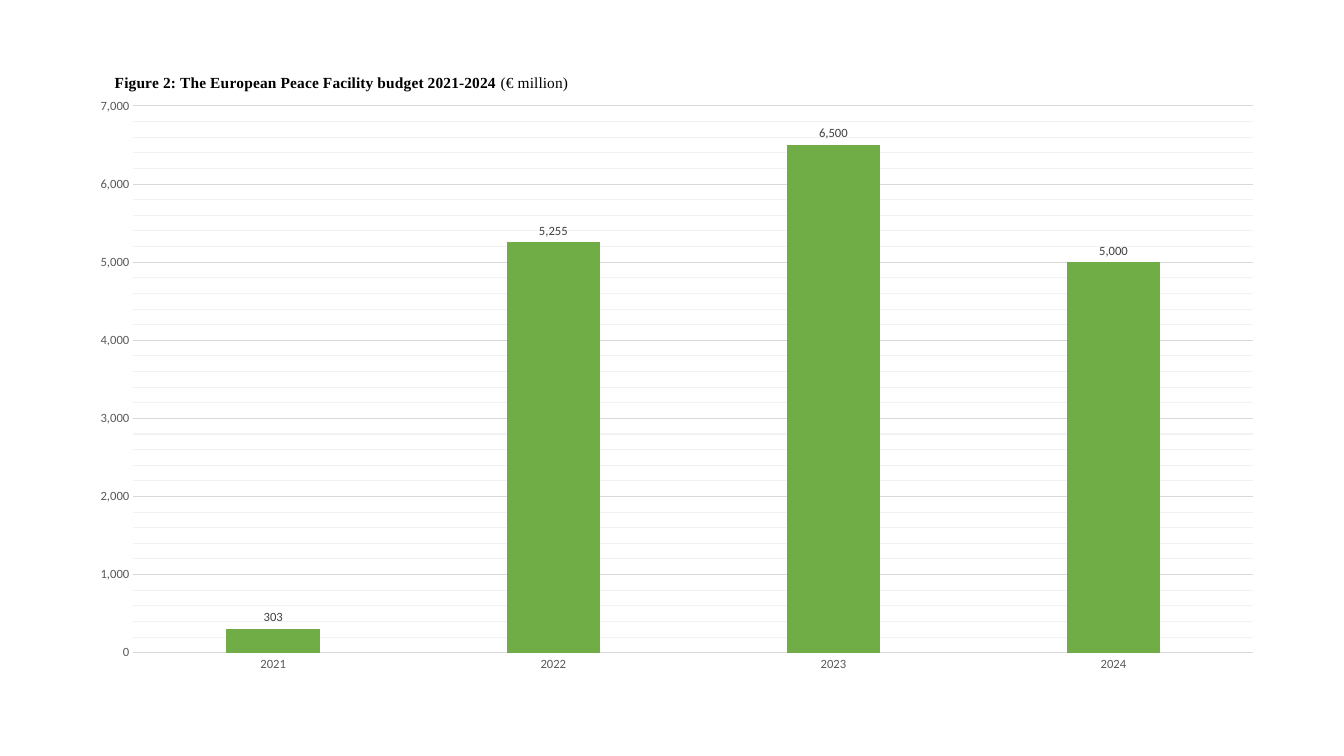
from dataclasses import dataclass

from pptx import Presentation
from pptx.chart.data import CategoryChartData
from pptx.dml.color import RGBColor
from pptx.enum.chart import XL_CHART_TYPE, XL_LABEL_POSITION, XL_TICK_MARK
from pptx.oxml import parse_xml
from pptx.oxml.ns import qn
from pptx.util import Inches, Pt

COLUMNS = XL_CHART_TYPE.COLUMN_CLUSTERED
OUTSIDE_END = XL_LABEL_POSITION.OUTSIDE_END
NO_TICK = XL_TICK_MARK.NONE
CHART_NS = "http://schemas.openxmlformats.org/drawingml/2006/chart"
DRAWING_NS = "http://schemas.openxmlformats.org/drawingml/2006/main"
BLANK_LAYOUT = 6


@dataclass(frozen=True)
class Theme:
    body_font: str = "Calibri"
    title_font: str = "Times New Roman"
    title_size: float = 11
    label_size: float = 9
    title_color: str = "000000"
    bar: str = "70AD47"
    axis_text: str = "595959"
    label_text: str = "404040"
    major_line: str = "D9D9D9"
    minor_line: str = "F2F2F2"
    line_width: float = 0.75


class BudgetSlide:
    def __init__(self, presentation, theme):
        self.theme = theme
        self.slide = presentation.slides.add_slide(
            presentation.slide_layouts[BLANK_LAYOUT])

    def style_font(self, font, name, size, color, bold=False):
        font.name = name
        font.size = Pt(size)
        font.bold = bold
        font.color.rgb = RGBColor.from_string(color)

    def style_line(self, line, color):
        line.width = Pt(self.theme.line_width)
        line.color.rgb = RGBColor.from_string(color)

    def style_minor_gridlines(self, axis):
        """Format the minor gridlines, which have no public format object."""
        gridlines = axis._element.find(qn("c:minorGridlines"))
        gridlines.append(parse_xml(
            f'<c:spPr xmlns:c="{CHART_NS}" xmlns:a="{DRAWING_NS}">'
            f'<a:ln w="{Pt(self.theme.line_width)}"><a:solidFill>'
            f'<a:srgbClr val="{self.theme.minor_line}"/>'
            f'</a:solidFill></a:ln></c:spPr>'))

    def manual_layout(self, target="", **fractions):
        """Build a chart layout from fractions of the chart area."""
        target_tag = f'<c:layoutTarget val="{target}"/>' if target else ""
        modes = '<c:xMode val="edge"/><c:yMode val="edge"/>'
        values = "".join(f'<c:{key} val="{value}"/>'
                         for key, value in fractions.items())
        return parse_xml(
            f'<c:layout xmlns:c="{CHART_NS}"><c:manualLayout>'
            f'{target_tag}{modes}{values}</c:manualLayout></c:layout>')

    def place(self, element, layout, index):
        for old_layout in element.findall(qn("c:layout")):
            element.remove(old_layout)
        element.insert(index, layout)

    def column_chart(self, categories, series_name, values, box):
        data = CategoryChartData(number_format="#,##0")
        data.categories = categories
        data.add_series(series_name, values)
        chart = self.slide.shapes.add_chart(COLUMNS, *box, data).chart
        chart.has_legend = False
        self.style_font(chart.font, self.theme.body_font,
                        self.theme.label_size, self.theme.axis_text)
        self.place(chart._chartSpace.chart.plotArea,
                   self.manual_layout("inner", x=0.048, y=0.102, w=0.933, h=0.849), 0)
        return chart

    def chart_title(self, chart, caption, unit):
        title = chart.chart_title
        paragraph = title.text_frame.paragraphs[0]
        for text, bold in ((caption, True), (unit, False)):
            run = paragraph.add_run()
            run.text = text
            self.style_font(run.font, self.theme.title_font,
                            self.theme.title_size, self.theme.title_color, bold)
        self.place(title._element, self.manual_layout(x=0.03, y=0.045), 1)

    def axes(self, chart, maximum, major, minor):
        years, amounts = chart.category_axis, chart.value_axis
        for axis in (years, amounts):
            axis.major_tick_mark = axis.minor_tick_mark = NO_TICK
            self.style_font(axis.tick_labels.font, self.theme.body_font,
                            self.theme.label_size, self.theme.axis_text)
        self.style_line(years.format.line, self.theme.major_line)
        amounts.format.line.fill.background()
        amounts.minimum_scale, amounts.maximum_scale = 0, maximum
        amounts.major_unit, amounts.minor_unit = major, minor
        amounts.has_major_gridlines = amounts.has_minor_gridlines = True
        self.style_line(amounts.major_gridlines.format.line, self.theme.major_line)
        self.style_minor_gridlines(amounts)
        amounts.tick_labels.number_format = "#,##0"
        amounts.tick_labels.number_format_is_linked = False

    def bars(self, chart, gap):
        plot = chart.plots[0]
        plot.gap_width = gap
        plot.vary_by_categories = False
        budget = plot.series[0]
        budget.format.fill.solid()
        budget.format.fill.fore_color.rgb = RGBColor.from_string(self.theme.bar)
        labels = budget.data_labels
        labels.show_value = True
        labels.position = OUTSIDE_END
        labels.number_format = "#,##0"
        labels.number_format_is_linked = False
        self.style_font(labels.font, self.theme.body_font,
                        self.theme.label_size, self.theme.label_text)


def main():
    presentation = Presentation()
    presentation.slide_width = Inches(13.33)
    presentation.slide_height = Inches(7.5)
    page = BudgetSlide(presentation, Theme())

    # Yearly budget columns
    chart_box = [Inches(length) for length in (0.75, 0.4, 11.91, 6.39)]
    budget_chart = page.column_chart(
        ["2021", "2022", "2023", "2024"], "Series 1",
        [303, 5255, 6500, 5000], chart_box)
    page.bars(budget_chart, gap=199)

    # Figure title and scales
    page.chart_title(budget_chart,
                     "Figure 2: The European Peace Facility budget 2021-2024",
                     " (€ million)")
    page.axes(budget_chart, maximum=7000, major=1000, minor=200)

    presentation.save("out.pptx")


if __name__ == "__main__":
    main()
